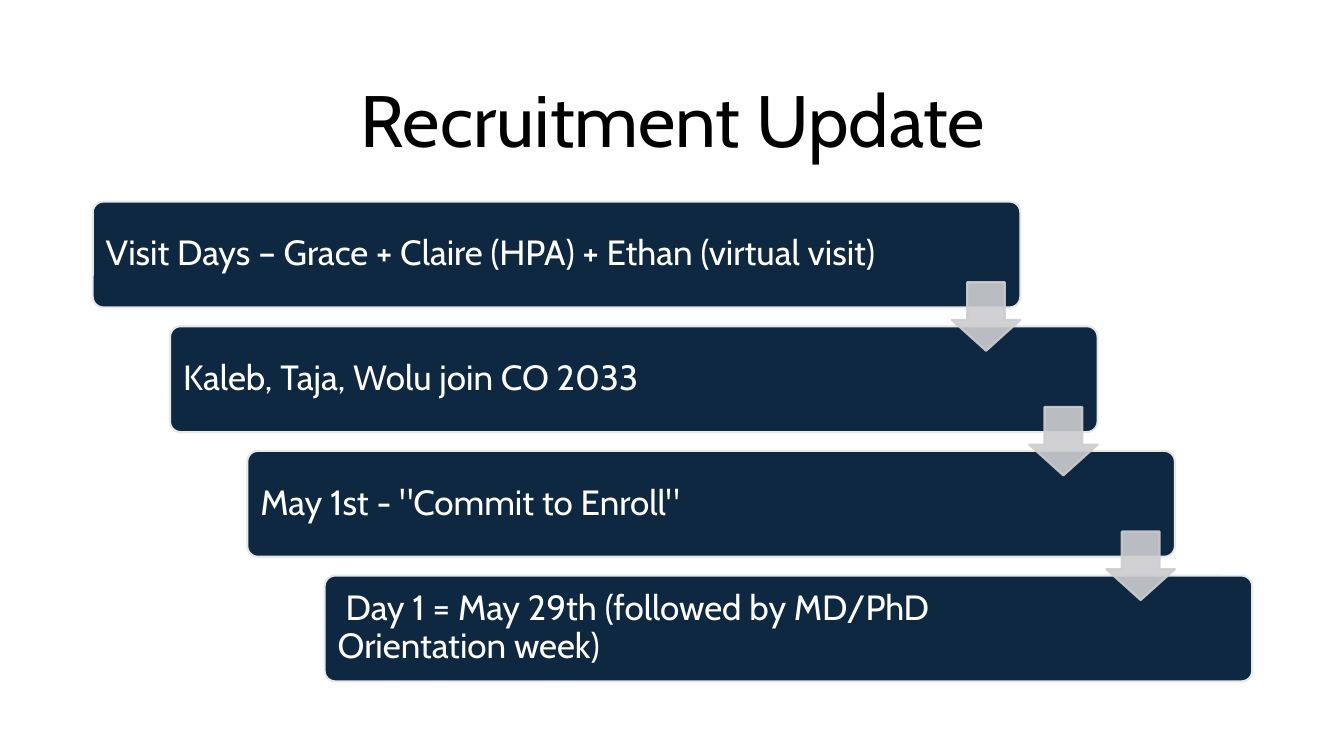
from lxml import etree
from pptx import Presentation
from pptx.dml.color import RGBColor
from pptx.enum.shapes import MSO_SHAPE
from pptx.enum.text import MSO_ANCHOR, MSO_AUTO_SIZE, PP_ALIGN
from pptx.oxml.ns import qn
from pptx.util import Inches, Pt

NAVY = RGBColor(0x0E, 0x28, 0x41)
PALE = RGBColor(0xE8, 0xE8, 0xE8)
GREY = RGBColor(0xCC, 0xCD, 0xCF)
BLACK = RGBColor(0x00, 0x00, 0x00)
WHITE = RGBColor(0xFF, 0xFF, 0xFF)

# Staircase of bars
LEFT, TOP = 0.92, 2.0
BAR_W, BAR_H = 9.2, 1.05
STEP_X, STEP_Y = 2.3 / 3, 3.71 / 3
ARROW = 0.68
ARROW_DROP = 0.8

# Text, right inset, first-line indent
STEPS = [
    ("Visit Days – Grace + Claire (HPA) + Ethan (virtual visit)", 1.26, 0),
    ("Kaleb, Taja, Wolu join CO 2033", 1.55, 0),
    ('May 1st - "Commit to Enroll"', 1.55, 0),
    ("Day 1 = May 29th (followed by MD/PhD Orientation week)", 1.55, 0.08),
]


class Deck:
    font = "Cabin"

    def __init__(self, prs):
        self.s = prs.slides.add_slide(prs.slide_layouts[5])

    def set_text(self, sp, text, size, color, align):
        tf = sp.text_frame
        tf.text = text
        tf.word_wrap = True
        tf.auto_size = MSO_AUTO_SIZE.NONE
        tf.vertical_anchor = MSO_ANCHOR.MIDDLE
        p = tf.paragraphs[0]
        p.alignment = align
        p.line_spacing = 0.9
        r = p.runs[0]
        r.font.name = self.font
        r.font.size = Pt(size)
        r.font.color.rgb = color
        return p

    def title(self, text, x, y, w, h):
        sp = self.s.shapes.title
        sp.left, sp.top, sp.width, sp.height = map(Inches, (x, y, w, h))
        self.set_text(sp, text, 52, BLACK, PP_ALIGN.CENTER)

    def shape(self, kind, x, y, w, h, adjustments, fill, line):
        sp = self.s.shapes.add_shape(kind, *map(Inches, (x, y, w, h)))
        for i, value in enumerate(adjustments):
            sp.adjustments[i] = value
        sp.shadow.inherit = False
        sp.fill.solid()
        sp.fill.fore_color.rgb = fill
        sp.line.color.rgb = line
        sp.line.width = Pt(1.5)
        return sp

    def bar(self, x, y, text, right, indent):
        sp = self.shape(MSO_SHAPE.ROUNDED_RECTANGLE, x, y, BAR_W, BAR_H,
                        [0.1], NAVY, PALE)
        p = self.set_text(sp, text, 25, WHITE, PP_ALIGN.LEFT)
        tf = sp.text_frame
        tf.margin_left = tf.margin_top = tf.margin_bottom = Inches(0.1)
        tf.margin_right = Inches(right)
        if indent:
            p._p.get_or_add_pPr().set("indent", str(Inches(indent)))

    def arrow(self, x, y):
        sp = self.shape(MSO_SHAPE.DOWN_ARROW, x, y, ARROW, ARROW,
                        [0.55, 0.45], GREY, GREY)
        # 90 % opacity for fill and outline
        for color in sp._element.spPr.iter(qn("a:srgbClr")):
            etree.SubElement(color, qn("a:alpha"), val="90000")


def main():
    prs = Presentation()
    prs.slide_width, prs.slide_height = Inches(13.33), Inches(7.5)
    deck = Deck(prs)
    deck.title("Recruitment Update", LEFT, 0.61, 11.5, 1.24)

    corners = [(LEFT + i * STEP_X, TOP + i * STEP_Y) for i in range(len(STEPS))]
    for (x, y), step in zip(corners, STEPS):
        deck.bar(x, y, *step)

    # Arrows sit at the right end of every bar but the last
    for x, y in corners[:-1]:
        deck.arrow(x + BAR_W - ARROW, y + ARROW_DROP)

    prs.save("out.pptx")


if __name__ == "__main__":
    main()
